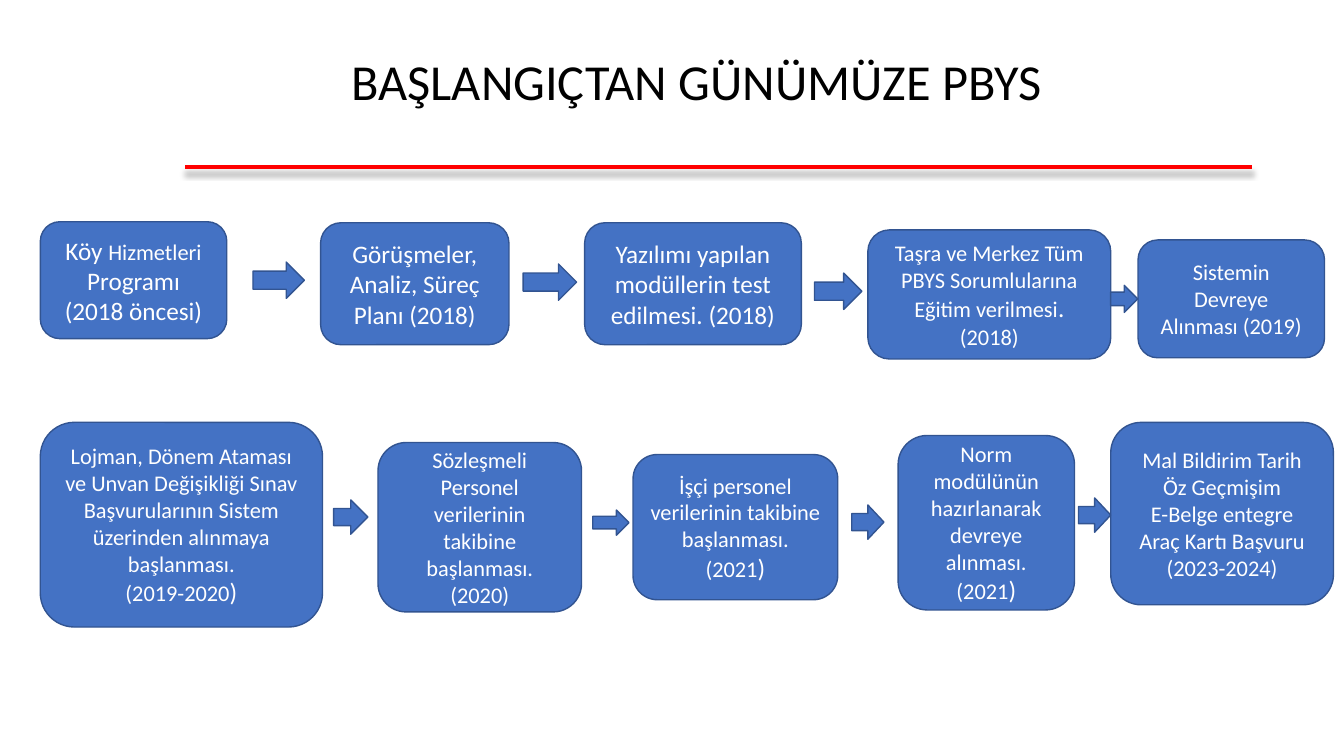
from lxml.etree import SubElement
from pptx import Presentation
from pptx.dml.color import RGBColor
from pptx.enum.shapes import MSO_CONNECTOR, MSO_SHAPE
from pptx.enum.text import MSO_ANCHOR, PP_ALIGN
from pptx.oxml.ns import qn
from pptx.util import Pt

COLORS = {"box": "4472C4", "edge": "325491", "text": "FFFFFF",
          "title": "000000", "rule": "FF0000", "shadow": "000000"}
FONT = "Calibri"
ROUND = MSO_SHAPE.ROUNDED_RECTANGLE
ALTERNATE = MSO_SHAPE.FLOWCHART_ALTERNATE_PROCESS

EARLY_STEPS = [
    (ALTERNATE, (0, 0, 133.2, 83.5),
     [[("Köy ", 18), ("Hizmetleri", 16), (" Programı", 18)], [("(2018 öncesi)", 18)]]),
    (ROUND, (200.2, 0.7, 134.6, 87.1), [[("Görüşmeler, Analiz, Süreç Planı (2018)", 18)]]),
    (ROUND, (388.8, 0.7, 154.8, 87.1),
     [[("Yazılımı yapılan modüllerin test edilmesi. (2018)", 18)]]),
    (ROUND, (591.1, 5.8, 173.5, 92.2),
     [[("Taşra ve Merkez Tüm PBYS Sorumlularına Eğitim verilmesi", 16),
       (". ", 18), ("(2018)", 16)]]),
    (ROUND, (784.1, 13, 133.2, 84.2), [[("Sistemin Devreye Alınması (2019)", 16)]]),
]
EARLY_ARROWS = [(151.9, 28.8, 36.7, 25.9), (344.9, 30.2, 38.2, 25.9),
                (553, 36.7, 33.8, 25.9), (764.6, 45.4, 19.4, 19.4)]

LATER_STEPS = [
    (ROUND, (0, 0, 201.6, 146.2),
     [[("Lojman, Dönem Ataması ve Unvan Değişikliği Sınav Başvurularının Sistem "
        "üzerinden alınmaya başlanması.", 16)], [("(2019-2020", 16), (")", 18)]]),
    (ALTERNATE, (241.2, 14.4, 145.4, 121),
     [[("Sözleşmeli Personel verilerinin takibine başlanması.", 16)], [("(2020)", 16)]]),
    (ROUND, (423.4, 23, 146.2, 103.7),
     [[("İşçi personel verilerinin takibine başlanması. (2021", 16), (")", 18)]]),
    (ALTERNATE, (612.7, 9.4, 126, 124.6),
     [[("Norm modülünün hazırlanarak devreye alınması.", 16)], [("(2021", 16), (")", 18)]]),
    (ROUND, (764.6, 0, 159.1, 130.3),
     [[(line, 16)] for line in ("Mal Bildirim Tarih", "Öz Geçmişim", "E-Belge entegre",
                                "Araç Kartı Başvuru", "(2023-2024)")]),
]
LATER_ARROWS = [(209.5, 55.4, 24.5, 24.5), (394.6, 62.6, 25.9, 18),
                (579.6, 59, 23, 24.5), (741.6, 54, 23, 24.5)]


def rgb(name):
    """Return the named colour."""
    return RGBColor.from_string(COLORS[name])


def write(tf, paragraphs, color):
    """Fill a text frame with centred paragraphs of (text, size) runs."""
    tf.word_wrap = True
    tf.vertical_anchor = MSO_ANCHOR.MIDDLE
    for i, runs in enumerate(paragraphs):
        p = tf.add_paragraph() if i else tf.paragraphs[0]
        p.alignment = PP_ALIGN.CENTER
        p.font.name = FONT
        p.font.color.rgb = rgb(color)
        sizes = {size for _, size in runs}
        if len(sizes) == 1:
            p.font.size = Pt(sizes.pop())
        for text, size in runs:
            r = p.add_run()
            r.text = text
            if p.font.size is None:
                r.font.size = Pt(size)


def add_header(s, x, y, w, h):
    """Place the title and the shadowed red rule below it."""
    tf = s.shapes.add_textbox(Pt(x), Pt(y), Pt(w), Pt(h)).text_frame
    write(tf, [[("BAŞLANGIÇTAN GÜNÜMÜZE PBYS", 36)]], "title")
    tf.paragraphs[0].line_spacing = 0.9
    rule_y = Pt(y + h + 15.1)
    rule = s.shapes.add_connector(MSO_CONNECTOR.STRAIGHT, Pt(x + w + 60.5), rule_y,
                                  Pt(x - 29.5), rule_y)
    rule.line.color.rgb = rgb("rule")
    rule.line.width = Pt(3)
    effects = SubElement(rule._element.spPr, qn("a:effectLst"))
    shadow = SubElement(effects, qn("a:outerShdw"), blurRad=str(Pt(4)), dist=str(Pt(4)),
                        dir="5400000", rotWithShape="0")
    color = SubElement(shadow, qn("a:srgbClr"), val=COLORS["shadow"])
    SubElement(color, qn("a:alpha"), val="25000")


def add_block(s, kind, x, y, w, h):
    """Add one blue outlined shape."""
    sp = s.shapes.add_shape(kind, Pt(x), Pt(y), Pt(w), Pt(h))
    sp.shadow.inherit = False
    sp.fill.solid()
    sp.fill.fore_color.rgb = rgb("box")
    sp.line.color.rgb = rgb("edge")
    sp.line.width = Pt(1)
    return sp


def add_timeline(s, x, y, steps, arrows):
    """Place a row of steps and arrows relative to its top left corner."""
    for kind, (dx, dy, w, h), paragraphs in steps:
        sp = add_block(s, kind, x + dx, y + dy, w, h)
        write(sp.text_frame, paragraphs, "text")
    for dx, dy, w, h in arrows:
        add_block(s, MSO_SHAPE.RIGHT_ARROW, x + dx, y + dy, w, h)


def main():
    """Build and save the slide."""
    prs = Presentation()
    prs.slide_width, prs.slide_height = Pt(960), Pt(540)
    s = prs.slides.add_slide(prs.slide_layouts[6])
    add_header(s, 162, 15.8, 671.8, 88.6)
    add_timeline(s, 28.8, 158.4, EARLY_STEPS, EARLY_ARROWS)
    add_timeline(s, 28.8, 301.7, LATER_STEPS, LATER_ARROWS)
    prs.save("out.pptx")


if __name__ == "__main__":
    main()
